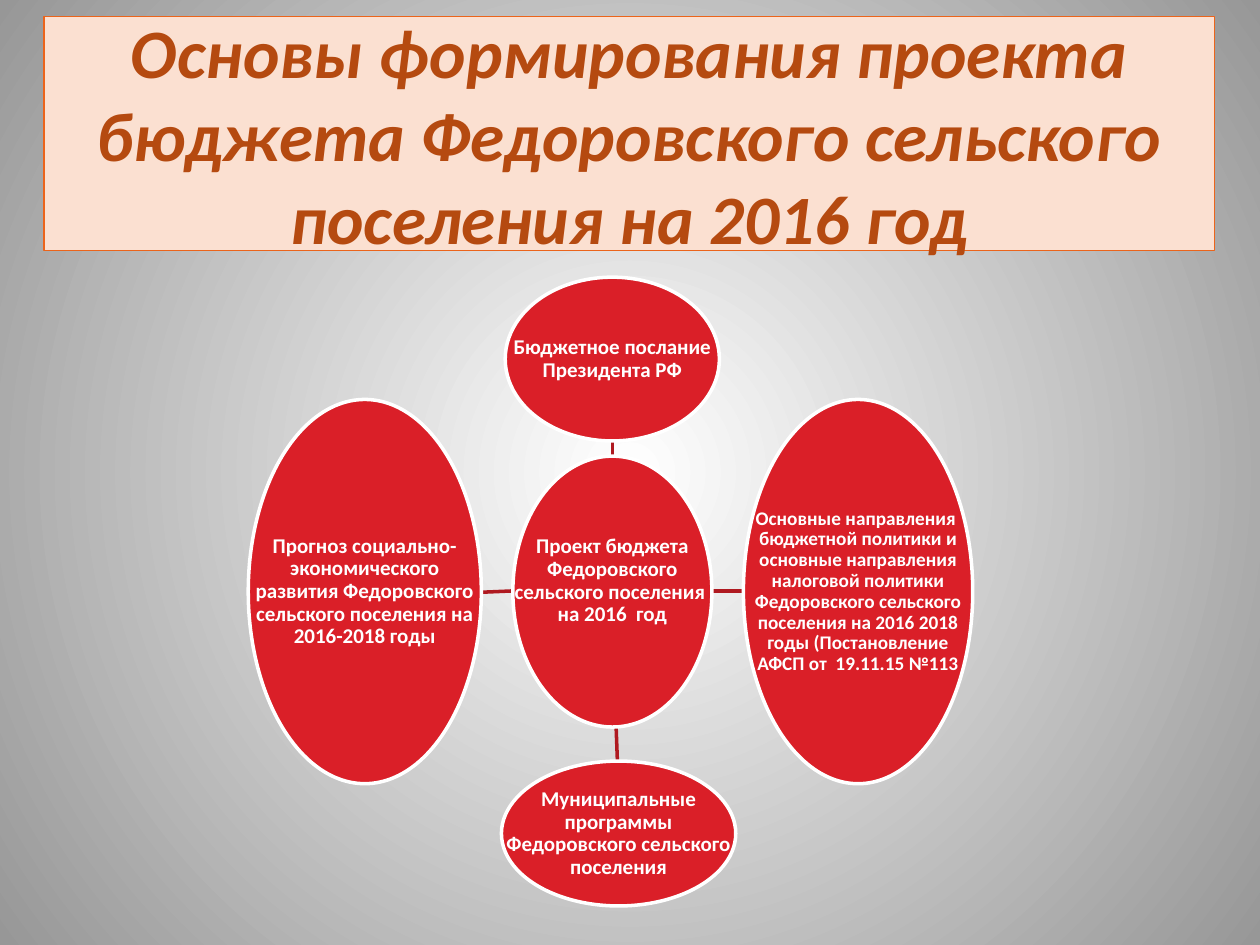
from dataclasses import dataclass

from lxml import etree
from pptx import Presentation
from pptx import util as u
from pptx.dml.color import RGBColor
from pptx.enum import shapes, text
from pptx.oxml.ns import qn
from pptx.shapes.autoshape import Shape
from pptx.slide import Slide

WHITE = RGBColor(0xFF, 0xFF, 0xFF)
GRAY = RGBColor(0x97, 0x97, 0x97)
RED = RGBColor(0xDA, 0x1F, 0x28)
DARK_RED = RGBColor(0xAF, 0x19, 0x20)
PEACH = RGBColor(0xFB, 0xE0, 0xD1)
ORANGE = RGBColor(0xEB, 0x64, 0x1B)
BROWN = RGBColor(0xB5, 0x4A, 0x10)

FONT = "Calibri"
SLIDE_WIDTH, SLIDE_HEIGHT = u.Inches(10), u.Inches(7.5)
COLUMN = SLIDE_WIDTH / 100
ROW = SLIDE_HEIGHT / 75
INSET = u.Inches(0.01)


@dataclass(frozen=True)
class Box:
    """Position and size in grid columns and rows."""
    left: float
    top: float
    width: float
    height: float

    def lengths(self) -> tuple[int, int, int, int]:
        return (round(self.left * COLUMN), round(self.top * ROW),
                round(self.width * COLUMN), round(self.height * ROW))


@dataclass(frozen=True)
class Node:
    label: str
    box: Box
    size: float = 12
    raise_rows: float = 0


@dataclass(frozen=True)
class Link:
    x1: float
    y1: float
    x2: float
    y2: float


TITLE = "Основы формирования проекта бюджета Федоровского сельского поселения на 2016 год"
TITLE_BOX = Box(3.5, 1.3, 92.9, 18.6)

NODES = [
    Node("Проект бюджета Федоровского сельского поселения  на 2016  год",
         Box(40.7, 36.2, 15.8, 21.5), raise_rows=0.85),
    Node("Бюджетное послание Президента РФ", Box(40.1, 22, 17, 13)),
    Node("Основные направления  бюджетной политики и основные направления "
         "налоговой политики Федоровского сельского поселения на 2016 2018 годы "
         "(Постановление АФСП от  19.11.15 №113", Box(59, 31.7, 18.2, 30.5), size=11),
    Node("Муниципальные программы Федоровского сельского поселения",
         Box(39.8, 60.4, 18.6, 11.5)),
    Node("Прогноз социально-экономического развития Федоровского сельского "
         "поселения на 2016-2018 годы", Box(19.7, 31.7, 18.5, 30.5)),
]

LINKS = [
    Link(48.6, 36.2, 48.6, 34.9),
    Link(56.5, 46.9, 59, 46.9),
    Link(48.9, 57.7, 49, 60.4),
    Link(40.7, 46.9, 38.3, 47),
]


def paint_background(slide: Slide) -> None:
    """Radial gradient, white in the middle and gray at the corners."""
    fill = slide.background.fill
    fill.gradient()
    for stop, color in zip(fill.gradient_stops, (WHITE, GRAY)):
        stop.color.rgb = color
    gradient = next(slide.element.iter(qn("a:gradFill")))
    gradient.remove(gradient.find(qn("a:lin")))
    path = etree.SubElement(gradient, qn("a:path"), path="circle")
    etree.SubElement(path, qn("a:fillToRect"), l="50000", t="50000", r="50000", b="50000")


def add_filled(slide: Slide, kind: shapes.MSO_SHAPE, box: Box, fill: RGBColor,
               line: RGBColor, line_width: float) -> Shape:
    shape = slide.shapes.add_shape(kind, *box.lengths())
    shape.shadow.inherit = False
    shape.fill.solid()
    shape.fill.fore_color.rgb = fill
    shape.line.color.rgb = line
    shape.line.width = u.Pt(line_width)
    return shape


def write(shape: Shape, words: str, size: float, color: RGBColor,
          italic: bool = False) -> None:
    frame = shape.text_frame
    frame.text = words
    frame.word_wrap = True
    frame.vertical_anchor = text.MSO_ANCHOR.MIDDLE
    paragraph = frame.paragraphs[0]
    paragraph.alignment = text.PP_ALIGN.CENTER
    font = paragraph.runs[0].font
    font.name, font.size = FONT, u.Pt(size)
    font.bold, font.italic = True, italic
    font.color.rgb = color


def add_title(slide: Slide) -> None:
    shape = add_filled(slide, shapes.MSO_SHAPE.RECTANGLE, TITLE_BOX, PEACH, ORANGE, 0.75)
    write(shape, TITLE, 39.6, BROWN, italic=True)


def add_node(slide: Slide, node: Node) -> None:
    """Ellipse with a label as wide as the whole ellipse."""
    add_filled(slide, shapes.MSO_SHAPE.OVAL, node.box, RED, WHITE, 2)
    label = slide.shapes.add_textbox(*node.box.lengths())
    write(label, node.label, node.size, WHITE)
    frame = label.text_frame
    frame.margin_left = frame.margin_right = frame.margin_top = INSET
    frame.margin_bottom = INSET + round(2 * node.raise_rows * ROW)
    frame.paragraphs[0].line_spacing = 0.9


def add_link(slide: Slide, link: Link) -> None:
    connector = slide.shapes.add_connector(
        shapes.MSO_CONNECTOR.STRAIGHT,
        round(link.x1 * COLUMN), round(link.y1 * ROW),
        round(link.x2 * COLUMN), round(link.y2 * ROW))
    connector.line.color.rgb = DARK_RED
    connector.line.width = u.Pt(2)
    etree.SubElement(connector.element.spPr, qn("a:effectLst"))


def main() -> None:
    presentation = Presentation()
    presentation.slide_width, presentation.slide_height = SLIDE_WIDTH, SLIDE_HEIGHT
    slide = presentation.slides.add_slide(presentation.slide_layouts[6])
    paint_background(slide)
    add_title(slide)
    for link in LINKS:
        add_link(slide, link)
    for node in NODES:
        add_node(slide, node)
    presentation.save("out.pptx")


if __name__ == "__main__":
    main()
